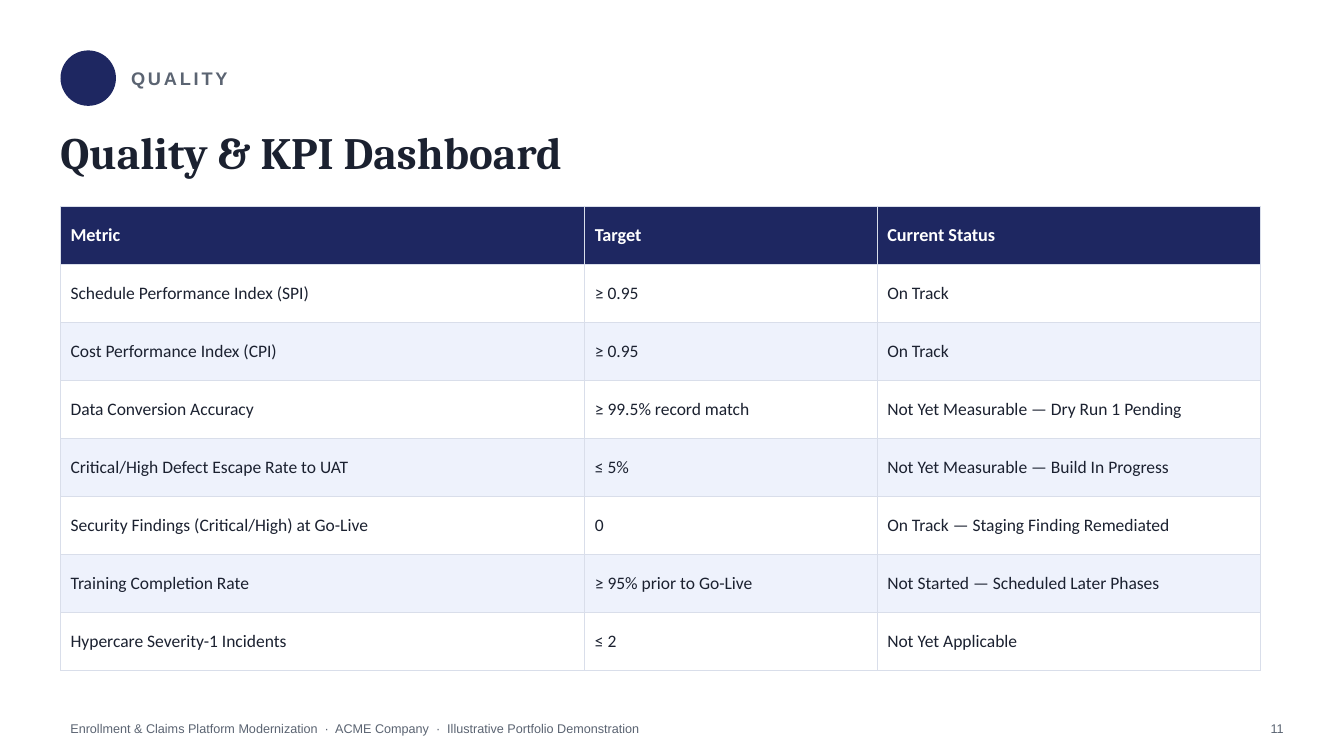
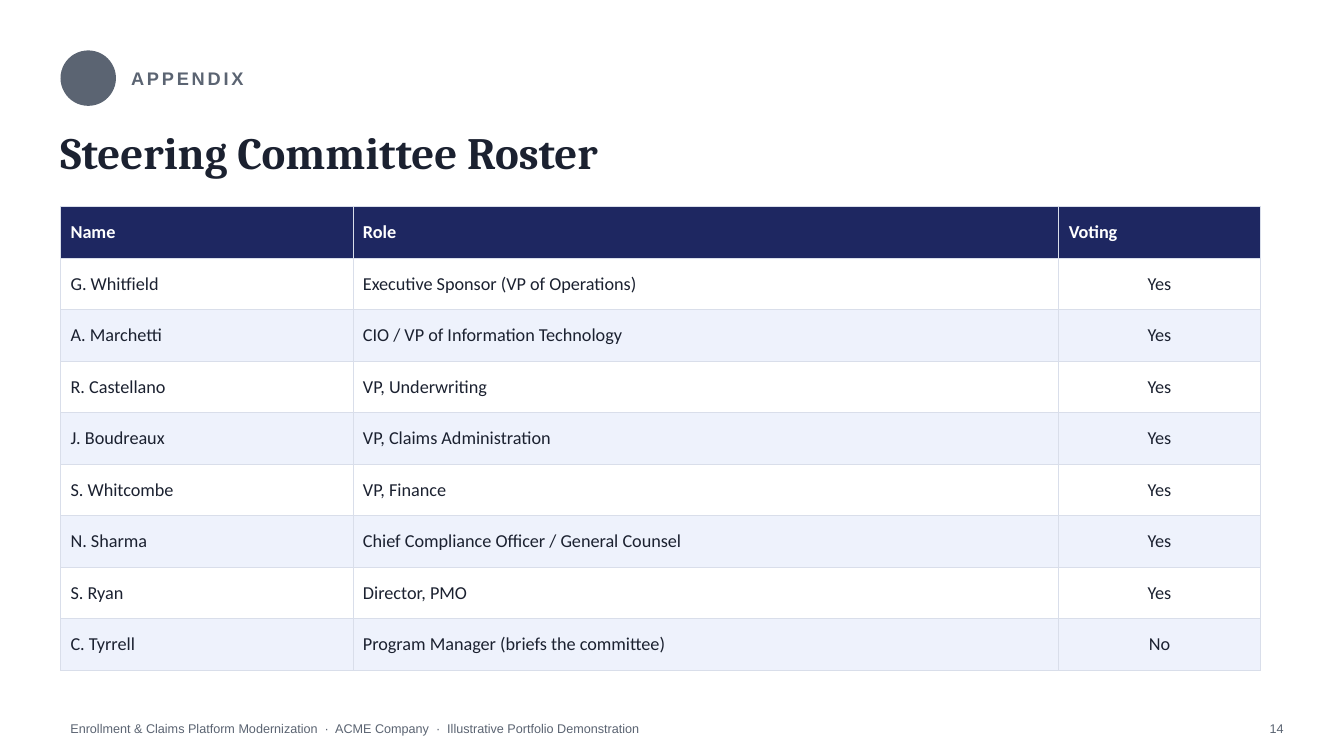
from pptx import Presentation
from pptx.dml.color import RGBColor
from pptx.enum.shapes import MSO_SHAPE
from pptx.enum.text import MSO_ANCHOR, MSO_AUTO_SIZE, PP_ALIGN
from pptx.oxml import parse_xml
from pptx.oxml.ns import nsdecls
from pptx.util import Pt

SCALE = 9144
NAVY, GREY, INK = "1E2761", "5B6472", "1B2130"
WHITE, PALE, RULE = "FFFFFF", "EEF2FC", "D9DEEA"
LEFT, CENTER, RIGHT = PP_ALIGN.LEFT, PP_ALIGN.CENTER, PP_ALIGN.RIGHT
FOOTER = ("Enrollment & Claims Platform Modernization  ·  ACME Company  ·  "
          "Illustrative Portfolio Demonstration")

METRICS = [
    ("Metric", "Target", "Current Status"),
    ("Schedule Performance Index (SPI)", "≥ 0.95", "On Track"),
    ("Cost Performance Index (CPI)", "≥ 0.95", "On Track"),
    ("Data Conversion Accuracy", "≥ 99.5% record match",
     "Not Yet Measurable — Dry Run 1 Pending"),
    ("Critical/High Defect Escape Rate to UAT", "≤ 5%",
     "Not Yet Measurable — Build In Progress"),
    ("Security Findings (Critical/High) at Go-Live", "0",
     "On Track — Staging Finding Remediated"),
    ("Training Completion Rate", "≥ 95% prior to Go-Live",
     "Not Started — Scheduled Later Phases"),
    ("Hypercare Severity-1 Incidents", "≤ 2", "Not Yet Applicable"),
]
ROSTER = [
    ("Name", "Role", "Voting"),
    ("G. Whitfield", "Executive Sponsor (VP of Operations)", "Yes"),
    ("A. Marchetti", "CIO / VP of Information Technology", "Yes"),
    ("R. Castellano", "VP, Underwriting", "Yes"),
    ("J. Boudreaux", "VP, Claims Administration", "Yes"),
    ("S. Whitcombe", "VP, Finance", "Yes"),
    ("N. Sharma", "Chief Compliance Officer / General Counsel", "Yes"),
    ("S. Ryan", "Director, PMO", "Yes"),
    ("C. Tyrrell", "Program Manager (briefs the committee)", "No"),
]


def px(*sizes):
    """Turn pixel lengths into a list of EMU lengths."""
    return [size * SCALE for size in sizes]


def rgb(code):
    """Turn a hex string into a colour."""
    return RGBColor.from_string(code)


def style(para, face, size, color, bold=False, align=LEFT):
    """Set the font and alignment of a paragraph."""
    para.alignment = align
    font = para.font
    font.name, font.size, font.bold = face, Pt(size), bold
    font.color.rgb = rgb(color)


def fill_frame(frame, text, inset=True):
    """Put middle-anchored text in a frame and return its paragraph."""
    frame.text = text
    frame.word_wrap = True
    frame.auto_size = MSO_AUTO_SIZE.NONE
    frame.vertical_anchor = MSO_ANCHOR.MIDDLE
    if not inset:
        frame.margin_left = frame.margin_right = 0
        frame.margin_top = frame.margin_bottom = 0
    return frame.paragraphs[0]


def add_text(slide, box, text, inset=True):
    """Add a text box and return its paragraph."""
    shape = slide.shapes.add_textbox(*px(*box))
    return fill_frame(shape.text_frame, text, inset)


def add_head(slide, box, label, title, color):
    """Place the section dot, its label and the slide title."""
    x, y, w, h = box
    dot = slide.shapes.add_shape(MSO_SHAPE.OVAL, *px(x, y, 55, 55))
    dot.shadow.inherit = False
    dot.fill.solid()
    dot.fill.fore_color.rgb = rgb(color)
    dot.line.fill.background()

    para = add_text(slide, (x + 70, y, 800, 55), label, False)
    style(para, "Arial", 13, GREY, True)
    para.runs[0].font._element.set("spc", "200")

    shape = slide.shapes.title
    shape.left, shape.top, shape.width, shape.height = px(x, y + 65, w, h - 65)
    para = fill_frame(shape.text_frame, title, False)
    style(para, "Cambria", 32, INK, True)


def add_edges(cell):
    """Draw thin rules on the four sides of a cell."""
    props = cell._tc.get_or_add_tcPr()
    for side in "LRTB":
        props.append(parse_xml(
            f'<a:ln{side} {nsdecls("a")} w="{Pt(0.5)}"><a:solidFill>'
            f'<a:srgbClr val="{RULE}"/></a:solidFill></a:ln{side}>'))


def add_grid(slide, box, rows, cols, aligns):
    """Fill the box with a table of equal rows and striped body."""
    frame = slide.shapes.add_table(len(rows), len(cols), *px(*box))
    table = frame.table
    for col, width in zip(table.columns, px(*cols)):
        col.width = width
    for i, (row, texts) in enumerate(zip(table.rows, rows)):
        row.height = frame.height // len(rows)
        head = i == 0
        back = NAVY if head else (PALE, WHITE)[i % 2]
        for cell, text, align in zip(row.cells, texts, aligns):
            add_edges(cell)
            cell.fill.solid()
            cell.fill.fore_color.rgb = rgb(back)
            cell.vertical_anchor = MSO_ANCHOR.MIDDLE
            cell.text = text
            para = cell.text_frame.paragraphs[0]
            if head:
                style(para, "Calibri", 13, WHITE, True)
            else:
                size = 13 if CENTER in aligns else 12.5
                style(para, "Calibri", size, INK, align=align)


def add_foot(slide, box, number):
    """Place the footer line and the page number."""
    x, y, w, h = box
    style(add_text(slide, (x, y, 950, h), FOOTER), "Arial", 9, GREY)
    para = add_text(slide, (x + w - 50, y, 50, h), str(number))
    style(para, "Arial", 9, GREY, align=RIGHT)


def add_page(deck, label, title, color, rows, cols, aligns, number):
    """Build one table slide."""
    slide = deck.slides.add_slide(deck.slide_layouts[5])
    add_head(slide, (60, 50, 1000, 135), label, title, color)
    add_grid(slide, (60, 205, 1190, 460), rows, cols, aligns)
    add_foot(slide, (60, 708, 1223, 30), number)


def main():
    """Build and save the deck."""
    deck = Presentation()
    deck.slide_width, deck.slide_height = px(1333, 750)
    add_page(deck, "QUALITY", "Quality & KPI Dashboard", NAVY,
             METRICS, (520, 290, 380), (LEFT, LEFT, LEFT), 11)
    add_page(deck, "APPENDIX", "Steering Committee Roster", GREY,
             ROSTER, (290, 700, 200), (LEFT, LEFT, CENTER), 14)
    deck.save("out.pptx")


if __name__ == "__main__":
    main()
